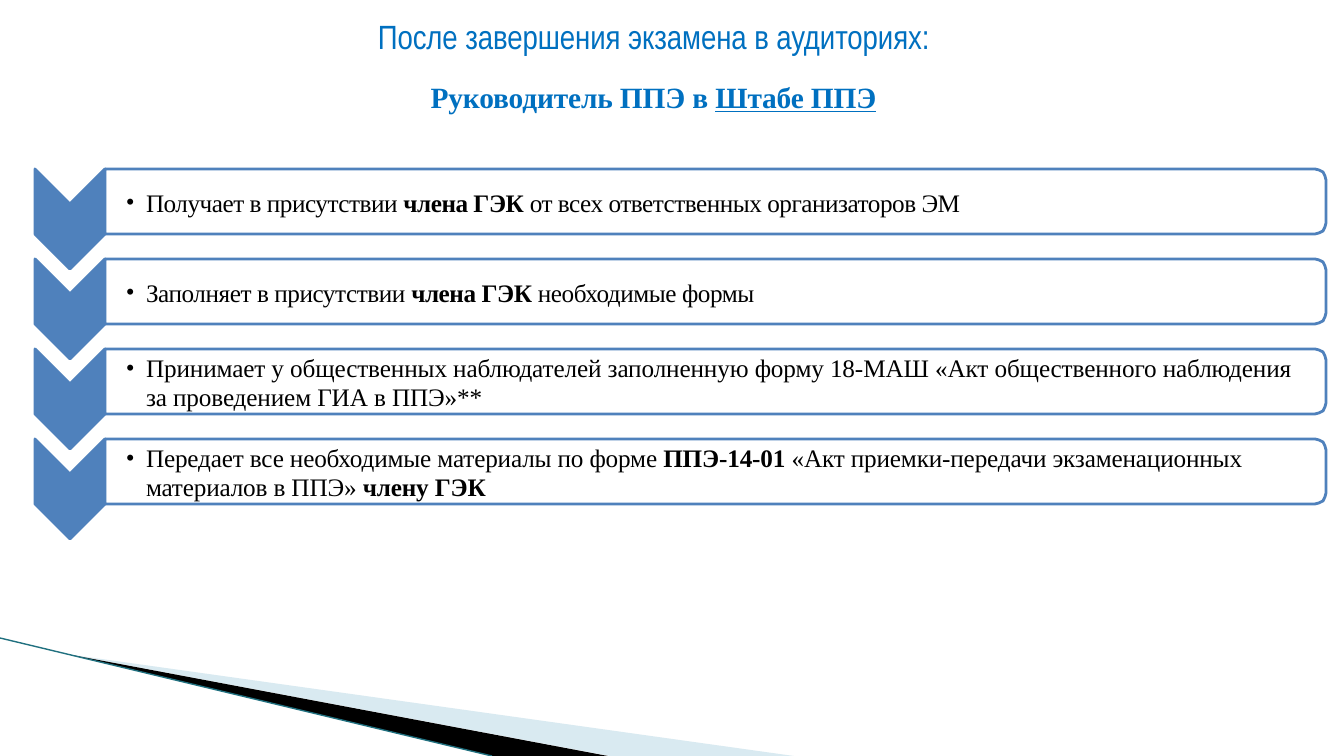
"""Builds the slide on the exam centre head's steps after the exam."""
from math import cos, pi, sin

from lxml import etree
from pptx import Presentation
from pptx import util as u
from pptx.dml.color import RGBColor
from pptx.enum import shapes, text
from pptx.oxml.ns import qn

PX = 914400 / 100.8
HUE = {"blue": "4F81BC", "head": "0070C0", "ink": "000000",
       "white": "FFFFFF", "pale": "A0CBDC", "teal": "20707F"}
SERIF = "Times New Roman"
STEPS = [
    ("Получает в присутствии |члена ГЭК| от всех ответственных организаторов ЭМ", -0.35),
    ("Заполняет в присутствии |члена ГЭК| необходимые формы", -0.3),
    ("Принимает у общественных наблюдателей заполненную форму 18-МАШ "
     "«Акт общественного наблюдения за проведением ГИА в ППЭ»**", -0.08),
    ("Передает все необходимые материалы по форме |ППЭ-14-01| «Акт приемки-передачи "
     "экзаменационных материалов в ППЭ» |члену ГЭК|", -0.1),
]


def px(n):
    return u.Emu(round(n * PX))


def rgb(name):
    return RGBColor.from_string(HUE[name])


def outline(slide, pts, fill, line=None, alpha=100):
    pen = slide.shapes.build_freeform(*pts[0], scale=PX)
    pen.add_line_segments(pts[1:], close=True)
    shape = pen.convert_to_shape()
    shape.shadow.inherit = False
    shape.fill.solid()
    shape.fill.fore_color.rgb = rgb(fill)
    if alpha < 100:
        tint = shape.fill._xPr.find(qn("a:solidFill"))[0]
        etree.SubElement(tint, qn("a:alpha"), val=str(alpha * 1000))
    if line:
        shape.line.color.rgb = rgb(line)
        shape.line.width = u.Pt(2)
    else:
        shape.line.fill.background()
    return shape


def frame(shape, anchor, left=0, top=0, right=0):
    box = shape.text_frame
    box.word_wrap = True
    box.vertical_anchor = anchor
    box.margin_left, box.margin_top, box.margin_right = px(left), px(top), px(right)
    box.margin_bottom = 0
    return box


def write(par, words, font=SERIF, size=18, hue="ink", bold=False, mark="bold",
          gap=0, align=text.PP_ALIGN.LEFT):
    par.alignment = align
    for i, part in enumerate(words.split("|")):
        if not part:
            continue
        run = par.add_run()
        run.text = part
        run.font.name, run.font.size = font, u.Pt(size)
        run.font.color.rgb = rgb(hue)
        run.font.bold = bold
        if i % 2:
            setattr(run.font, mark, True)
        run.font._element.set("spc", str(round(gap * 100)))


def swoosh(slide, x, y, w, h):
    base = y + h
    outline(slide, [(x + 73, y + 17), (x + 794, base), (x + 610, base)], "pale", alpha=40)
    outline(slide, [(x + 72, y + 17), (x + 608, base), (x + 492, base)], "ink")
    edge = slide.shapes.add_connector(
        shapes.MSO_CONNECTOR.STRAIGHT, px(x), px(y), px(x + w), px(base))
    edge.line.color.rgb = rgb("teal")
    edge.line.width = u.Pt(1)
    etree.SubElement(edge._element.spPr, qn("a:effectLst"))


def title(slide, x, y, w, h):
    shape = slide.shapes.add_textbox(px(x), px(y), px(w), px(h))
    box = frame(shape, text.MSO_ANCHOR.TOP)
    mid = text.PP_ALIGN.CENTER
    head = box.paragraphs[0]
    write(head, "После завершения экзамена в аудиториях:", font="Arial Narrow",
          size=24, hue="head", gap=-0.05, align=mid)
    head._p.get_or_add_pPr().set("marR", str(px(98)))
    sub = box.add_paragraph()
    sub.space_before = u.Pt(16)
    write(sub, "Руководитель ППЭ в |Штабе ППЭ", size=21, hue="head", bold=True,
          mark="underline", gap=-0.1, align=mid)


def step(slide, x, y, w, h, words, gap):
    half, r = 35, 11
    neck, end, base = x + 2 * half, x + w, y + h
    outline(slide, [(x, y), (x + half, y + half), (neck, y), (neck, base),
                    (x + half, base + half), (x, base)], "blue", "blue")
    turns = [pi / 2 * i / 4 for i in range(5)]
    upper = [(end - r + r * sin(a), y + r - r * cos(a)) for a in turns]
    lower = [(end - r + r * cos(a), base - r + r * sin(a)) for a in turns]
    panel = outline(slide, [(neck, y), *upper, *lower, (neck, base)],
                    "white", "blue", alpha=90)
    box = frame(panel, text.MSO_ANCHOR.MIDDLE, left=21, top=3, right=21)
    par = box.paragraphs[0]
    par.line_spacing = u.Pt(20.1)
    props = par._p.get_or_add_pPr()
    props.set("marL", str(px(20)))
    props.set("indent", str(-px(20)))
    etree.SubElement(props, qn("a:buFont"), typeface=SERIF)
    etree.SubElement(props, qn("a:buChar"), char="•")
    write(par, words, gap=gap)


def steps(slide, x, y, w, h):
    pitch = h // len(STEPS)
    for i, (words, gap) in enumerate(STEPS):
        step(slide, x, y + i * pitch, w, 65, words, gap)


def main():
    deck = Presentation()
    deck.slide_width, deck.slide_height = px(1344), px(756)
    slide = deck.slides.add_slide(deck.slide_layouts[6])
    swoosh(slide, 0, 638, 492, 118)
    title(slide, 85, 16, 1235, 100)
    steps(slide, 35, 169, 1291, 360)
    deck.save("out.pptx")


if __name__ == "__main__":
    main()
